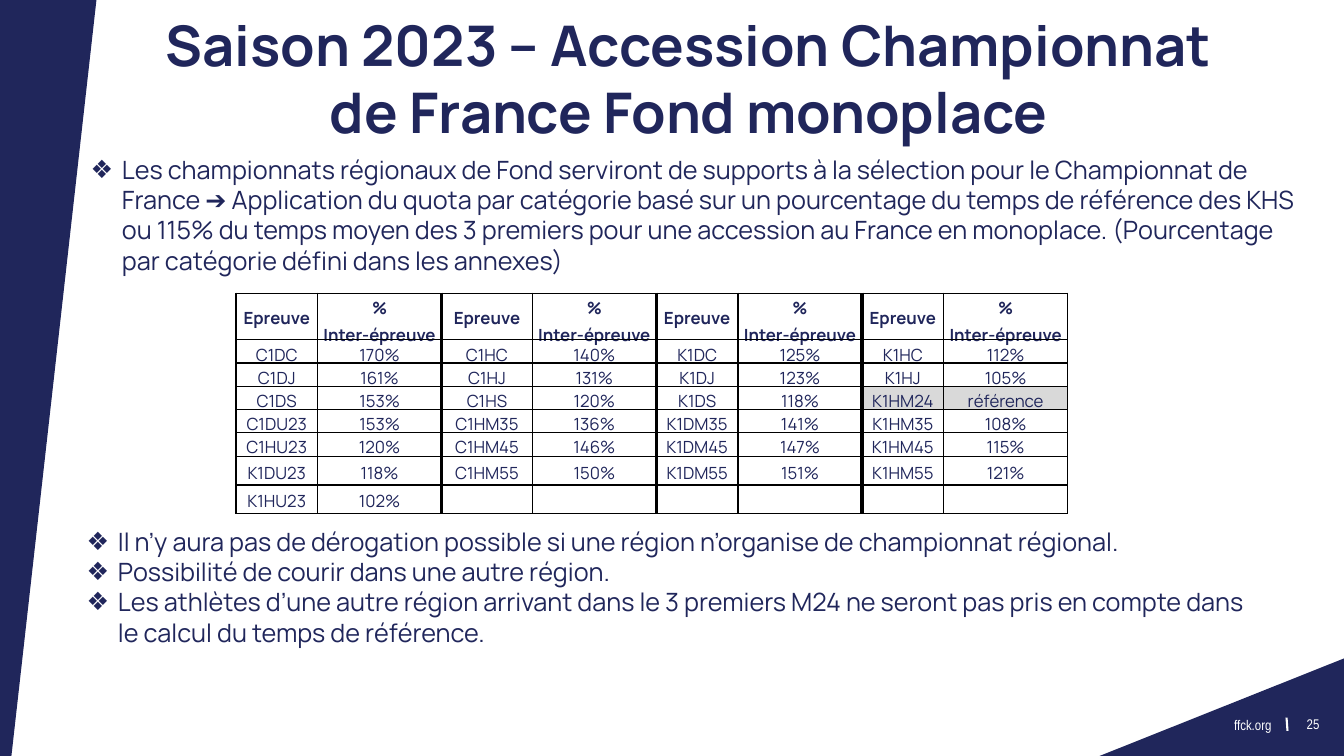
from lxml import etree
from pptx import Presentation
from pptx.dml.color import RGBColor
from pptx.enum.shapes import MSO_CONNECTOR
from pptx.enum.text import MSO_ANCHOR, MSO_AUTO_SIZE, PP_ALIGN
from pptx.oxml.ns import qn
from pptx.util import Inches, Pt

NAVY = RGBColor(0x20, 0x26, 0x5B)
WHITE = RGBColor(0xFF, 0xFF, 0xFF)
GREY = RGBColor(0xD9, 0xD9, 0xD9)
BLACK = RGBColor(0, 0, 0)
LEFT, CENTER, RIGHT = PP_ALIGN.LEFT, PP_ALIGN.CENTER, PP_ALIGN.RIGHT
TOP, MIDDLE = MSO_ANCHOR.TOP, MSO_ANCHOR.MIDDLE
GROW = MSO_AUTO_SIZE.SHAPE_TO_FIT_TEXT
STRAIGHT = MSO_CONNECTOR.STRAIGHT
MAIN_FONT, FOOTER_FONT = "Manrope", "Arial Narrow"

TITLE = "Saison 2023 – Accession Championnat de France Fond monoplace"
SELECTION = [
    "Les championnats régionaux de Fond serviront de supports à la sélection pour le "
    "Championnat de France ➔ Application du quota par catégorie basé sur un pourcentage "
    "du temps de référence des KHS ou 115% du temps moyen des 3 premiers pour une "
    "accession au France en monoplace. (Pourcentage par catégorie défini dans les annexes)",
]
RULES = [
    "Il n’y aura pas de dérogation possible si une région n’organise de championnat régional.",
    "Possibilité de courir dans une autre région.",
    "Les athlètes d’une autre région arrivant dans le 3 premiers M24 ne seront pas pris en "
    "compte dans le calcul du temps de référence.",
]
HEADER = ["Epreuve", "%\nInter-épreuve"] * 4
QUOTAS = [
    ["C1DC", "170%", "C1HC", "140%", "K1DC", "125%", "K1HC", "112%"],
    ["C1DJ", "161%", "C1HJ", "131%", "K1DJ", "123%", "K1HJ", "105%"],
    ["C1DS", "153%", "C1HS", "120%", "K1DS", "118%", "K1HM24", "référence"],
    ["C1DU23", "153%", "C1HM35", "136%", "K1DM35", "141%", "K1HM35", "108%"],
    ["C1HU23", "120%", "C1HM45", "146%", "K1DM45", "147%", "K1HM45", "115%"],
    ["K1DU23", "118%", "C1HM55", "150%", "K1DM55", "151%", "K1HM55", "121%"],
    ["K1HU23", "102%", "", "", "", "", "", ""],
]
REFERENCE_CELLS = {"K1HM24", "référence"}
COLUMN_WIDTHS = [0.81, 1.23, 0.9, 1.23, 0.81, 1.23, 0.81, 1.23]
ROW_HEIGHTS = [0.46, 0.23, 0.23, 0.23, 0.23, 0.24, 0.28, 0.28]
LEFT_BAND = [(0.96, -0.03), (-0.02, -0.03), (-0.01, 7.53), (0.11, 7.53)]
CORNER = [(13.36, 6.52), (10.83, 7.53), (13.36, 7.52)]


def add_span(para, text, size, color=NAVY, font=MAIN_FONT, bold=False):
    span = para.add_run()
    span.text = text
    span.font.size = Pt(size)
    span.font.name = font
    span.font.bold = bold
    span.font.color.rgb = color


def place(box, left, top, width, height):
    box.left, box.top = Inches(left), Inches(top)
    box.width, box.height = Inches(width), Inches(height)
    frame = box.text_frame
    frame.word_wrap = True
    frame.auto_size = GROW
    frame.vertical_anchor = TOP
    return frame


def add_polygon(slide, points):
    builder = slide.shapes.build_freeform(
        Inches(points[0][0]), Inches(points[0][1]), scale=1.0)
    builder.add_line_segments([(Inches(x), Inches(y)) for x, y in points[1:]], close=True)
    shape = builder.convert_to_shape()
    shape.shadow.inherit = False
    shape.fill.solid()
    shape.fill.fore_color.rgb = NAVY
    shape.line.fill.background()


def add_footer(slide, text, area, align, left_inset, right_inset):
    frame = place(slide.shapes.add_textbox(0, 0, 0, 0), *area)
    frame.margin_left, frame.margin_right = Inches(left_inset), Inches(right_inset)
    para = frame.paragraphs[0]
    para.alignment = align
    add_span(para, text, 10, WHITE, FOOTER_FONT)


def fill_bullets(box, items, area):
    frame = place(box, *area)
    for index, item in enumerate(items):
        para = frame.add_paragraph() if index else frame.paragraphs[0]
        properties = para._p.get_or_add_pPr()
        properties.set("marL", str(Inches(0.31)))
        properties.set("indent", str(-Inches(0.31)))
        etree.SubElement(properties, qn("a:buChar")).set("char", "❖")
        para.alignment = LEFT
        para.space_before = Pt(0)
        add_span(para, item, 18)


def set_borders(cell, column):
    """Draw thin borders, thick between two pairs of columns."""
    last = len(COLUMN_WIDTHS) - 1
    widths = {
        "L": 3 if column % 2 == 0 and column > 0 else 1,
        "R": 3 if column % 2 == 1 and column < last else 1,
        "T": 1,
        "B": 1,
    }
    properties = cell._tc.get_or_add_tcPr()
    for position, (side, width) in enumerate(widths.items()):
        line = etree.Element(qn(f"a:ln{side}"), w=str(Pt(width)))
        fill = etree.SubElement(line, qn("a:solidFill"))
        etree.SubElement(fill, qn("a:srgbClr")).set("val", str(BLACK))
        properties.insert(position, line)


def fill_cell(cell, text, column, bold):
    cell.margin_left = cell.margin_right = Inches(0.05)
    cell.margin_top = cell.margin_bottom = 0
    cell.vertical_anchor = MIDDLE
    if text in REFERENCE_CELLS:
        cell.fill.solid()
        cell.fill.fore_color.rgb = GREY
    else:
        cell.fill.background()
    set_borders(cell, column)
    frame = cell.text_frame
    for index, line in enumerate(text.split("\n")):
        para = frame.add_paragraph() if index else frame.paragraphs[0]
        para.alignment = CENTER
        para.line_spacing = 1.15
        if line:
            add_span(para, line, 12, bold=bold)
        else:
            etree.SubElement(para._p, qn("a:endParaRPr")).set("sz", "1200")


def add_quota_table(slide):
    rows = [HEADER] + QUOTAS
    table = slide.shapes.add_table(
        len(rows), len(HEADER), Inches(2.34), Inches(2.91),
        Inches(sum(COLUMN_WIDTHS)), Inches(sum(ROW_HEIGHTS))).table
    table.first_row = table.horz_banding = False
    for column, width in zip(table.columns, COLUMN_WIDTHS):
        column.width = Inches(width)
    for row, height in zip(table.rows, ROW_HEIGHTS):
        row.height = Inches(height)
    for row, texts in enumerate(rows):
        for column, text in enumerate(texts):
            fill_cell(table.cell(row, column), text, column, bold=row == 0)


def main():
    deck = Presentation()
    deck.slide_width, deck.slide_height = Inches(13.33), Inches(7.5)
    slide = deck.slides.add_slide(deck.slide_layouts.get_by_name("Two Content"))
    title, selection, rules = slide.placeholders

    add_polygon(slide, LEFT_BAND)
    add_polygon(slide, CORNER)
    add_footer(slide, "25", (12.76, 7.05, 0.7, 0.27), LEFT, 0.2, 0.1)
    divider = slide.shapes.add_connector(
        STRAIGHT, Inches(12.76), Inches(7.12), Inches(12.77), Inches(7.25))
    divider.line.color.rgb = WHITE
    divider.line.width = Pt(1.5)
    etree.SubElement(divider._element.spPr, qn("a:effectLst"))
    add_footer(slide, "ffck.org", (11.86, 7.06, 0.95, 0.27), RIGHT, 0.1, 0.2)

    para = place(title, 1.27, 0.05, 11.12, 1.45).paragraphs[0]
    para.alignment = CENTER
    add_span(para, TITLE, 40, bold=True)
    fill_bullets(selection, SELECTION, (0.8, 1.48, 12.32, 1.62))
    add_quota_table(slide)
    fill_bullets(rules, RULES, (0.76, 5.17, 11.75, 1.31))
    deck.save("out.pptx")


if __name__ == "__main__":
    main()
